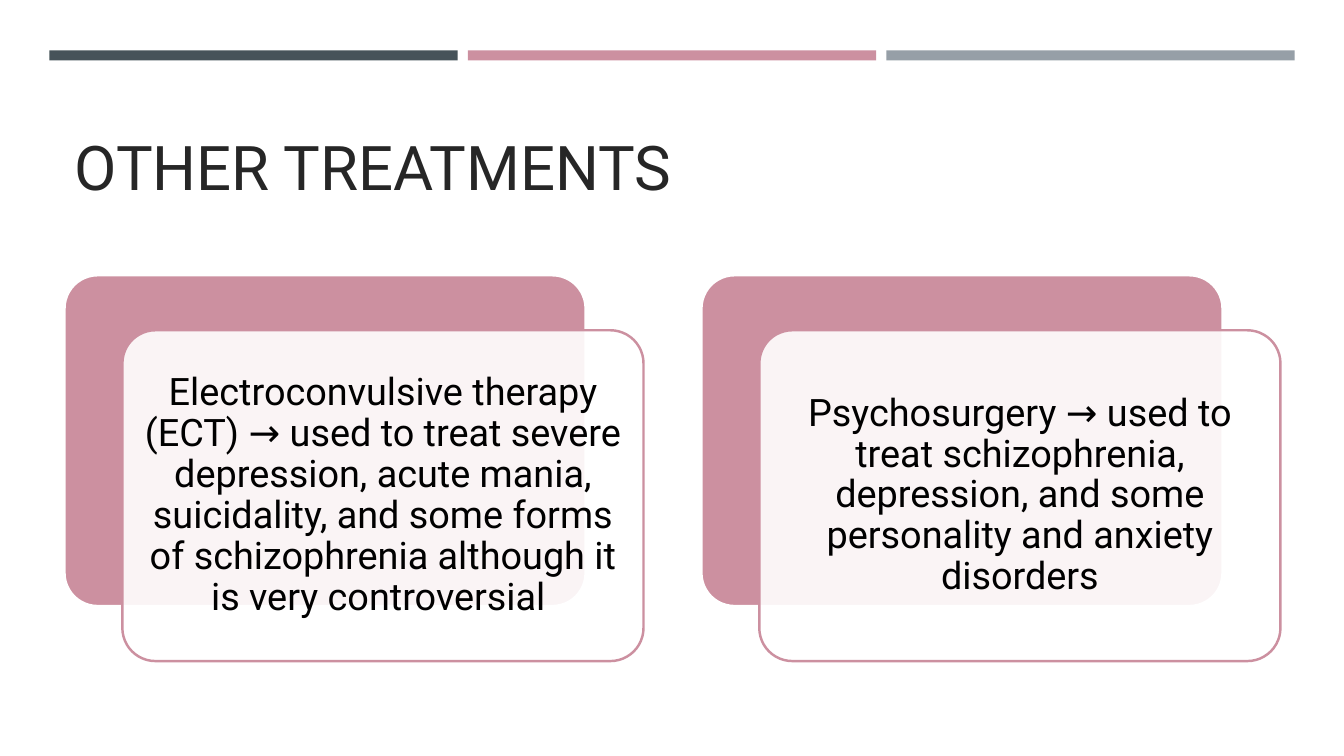
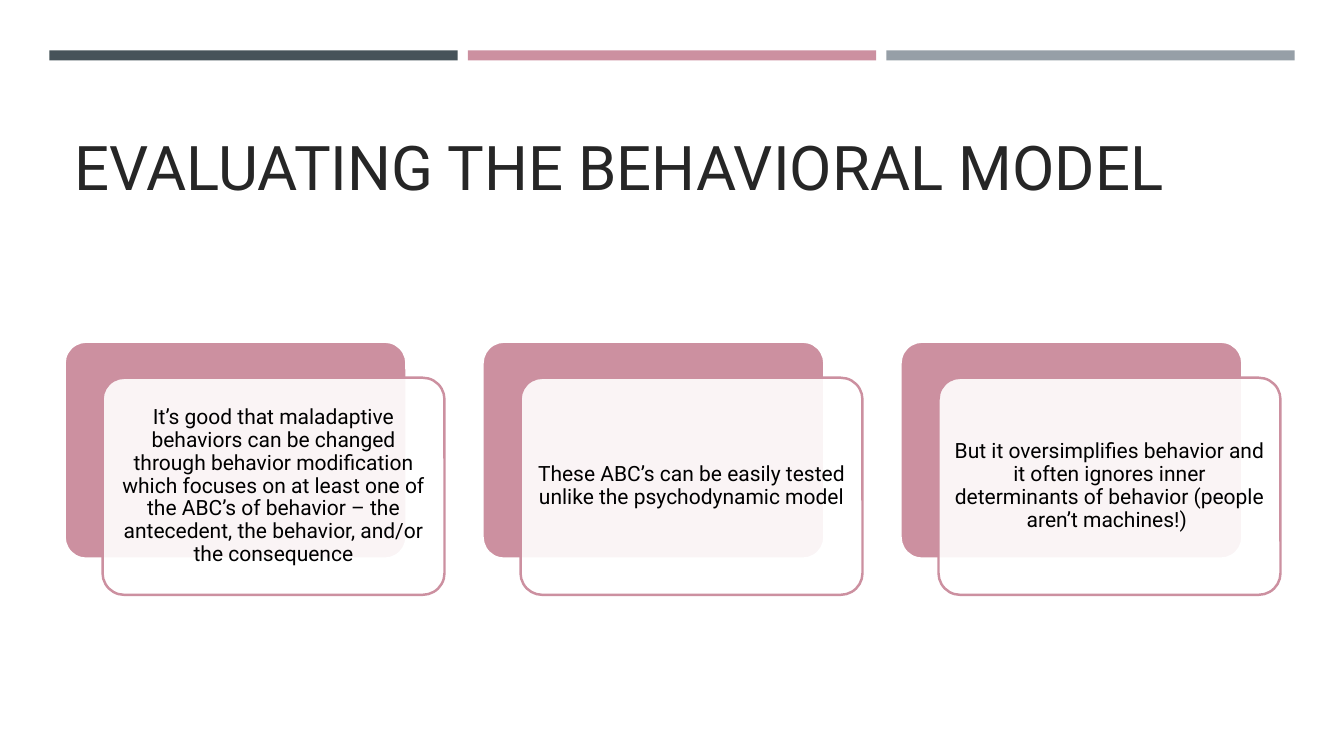
from lxml import etree
from pptx import Presentation
from pptx.dml.color import RGBColor
from pptx.enum.shapes import MSO_SHAPE as Shape
from pptx.enum.text import MSO_ANCHOR as Anchor, MSO_AUTO_SIZE as AutoSize, PP_ALIGN as Align
from pptx.oxml.ns import qn
from pptx.util import Inches, Pt

# Shared look
FONT = "Roboto"
WHITE, BLACK, TITLE_INK = "FFFFFF", "000000", "262626"
SLATE, ROSE, GREY = "465359", "CC90A0", "969FA7"
LEFT, CONTENT_WIDTH = 0.64, 12.06
CARDS_MIDDLE = 4.645


def rgb(hex_color):
    return RGBColor.from_string(hex_color)


def add_block(slide, preset, left, top, width, height, fill, outline=None):
    block = slide.shapes.add_shape(
        preset, Inches(left), Inches(top), Inches(width), Inches(height))
    block.shadow.inherit = False
    block.fill.solid()
    block.fill.fore_color.rgb = rgb(fill)
    if outline:
        block.line.color.rgb = rgb(outline)
        block.line.width = Pt(1.75)
    else:
        block.line.fill.background()
    return block


def set_opacity(block, percent):
    color = block.element.spPr.find(qn("a:solidFill"))[0]
    etree.SubElement(color, qn("a:alpha"), val=str(percent * 1000))


def write(frame, text, size, color, align, anchor):
    frame.word_wrap = True
    frame.auto_size = AutoSize.NONE
    frame.vertical_anchor = anchor
    paragraph = frame.paragraphs[0]
    paragraph.text = text
    paragraph.alignment = align
    paragraph.line_spacing = 0.9
    paragraph.font.name = FONT
    paragraph.font.size = Pt(size)
    paragraph.font.color.rgb = rgb(color)


def add_titled_slide(prs, heading):
    slide = prs.slides.add_slide(prs.slide_layouts[5])
    # Three bands across the top
    for i, color in enumerate((SLATE, ROSE, GREY)):
        add_block(slide, Shape.RECTANGLE, 0.49 + i * 4.15, 0.5, 4.05, 0.1, color)
    title = slide.shapes.title
    title.left, title.top = Inches(LEFT), Inches(0.77)
    title.width, title.height = Inches(CONTENT_WIDTH), Inches(1.3)
    write(title.text_frame, heading, 44, TITLE_INK, Align.LEFT, Anchor.BOTTOM)
    return slide


def add_cards(slide, texts, size, inset):
    """A row of layered cards: 9 units wide, shifted by 1 unit, 1 unit apart."""
    unit = CONTENT_WIDTH / (11 * len(texts) - 1)
    width, shift_x = 9 * unit, unit
    height, shift_y = 0.635 * width, 0.95 * unit
    top = CARDS_MIDDLE - (height + shift_y) / 2
    for i, text in enumerate(texts):
        left = LEFT + i * 11 * unit
        back = add_block(slide, Shape.ROUNDED_RECTANGLE,
                         left, top, width, height, ROSE, WHITE)
        front = add_block(slide, Shape.ROUNDED_RECTANGLE,
                          left + shift_x, top + shift_y, width, height, WHITE, ROSE)
        for card in (back, front):
            card.adjustments[0] = 0.1
        set_opacity(front, 90)
        frame = front.text_frame
        frame.margin_left = frame.margin_right = Inches(inset)
        frame.margin_top = frame.margin_bottom = Inches(inset)
        write(frame, text, size, BLACK, Align.CENTER, Anchor.MIDDLE)


def main():
    prs = Presentation()
    prs.slide_width, prs.slide_height = Inches(13.33), Inches(7.5)

    # Other treatments
    treatments = add_titled_slide(prs, "OTHER TREATMENTS")
    add_cards(treatments, [
        "Electroconvulsive therapy (ECT) → used to treat severe depression, acute mania, "
        "suicidality, and some forms of schizophrenia although it is very controversial ",
        "Psychosurgery → used to treat schizophrenia, depression, and some personality "
        "and anxiety disorders",
    ], size=27, inset=0.11)

    # Evaluation of the model
    evaluation = add_titled_slide(prs, "EVALUATING THE BEHAVIORAL MODEL")
    add_cards(evaluation, [
        "It’s good that maladaptive behaviors can be changed through behavior modification "
        "which focuses on at least one of the ABC’s of behavior – the antecedent, "
        "the behavior, and/or the consequence",
        "These ABC’s can be easily tested unlike the psychodynamic model",
        "But it oversimplifies behavior and it often ignores inner determinants of behavior "
        "(people aren’t machines!) ",
    ], size=15, inset=0.06)

    prs.save("out.pptx")


if __name__ == "__main__":
    main()
